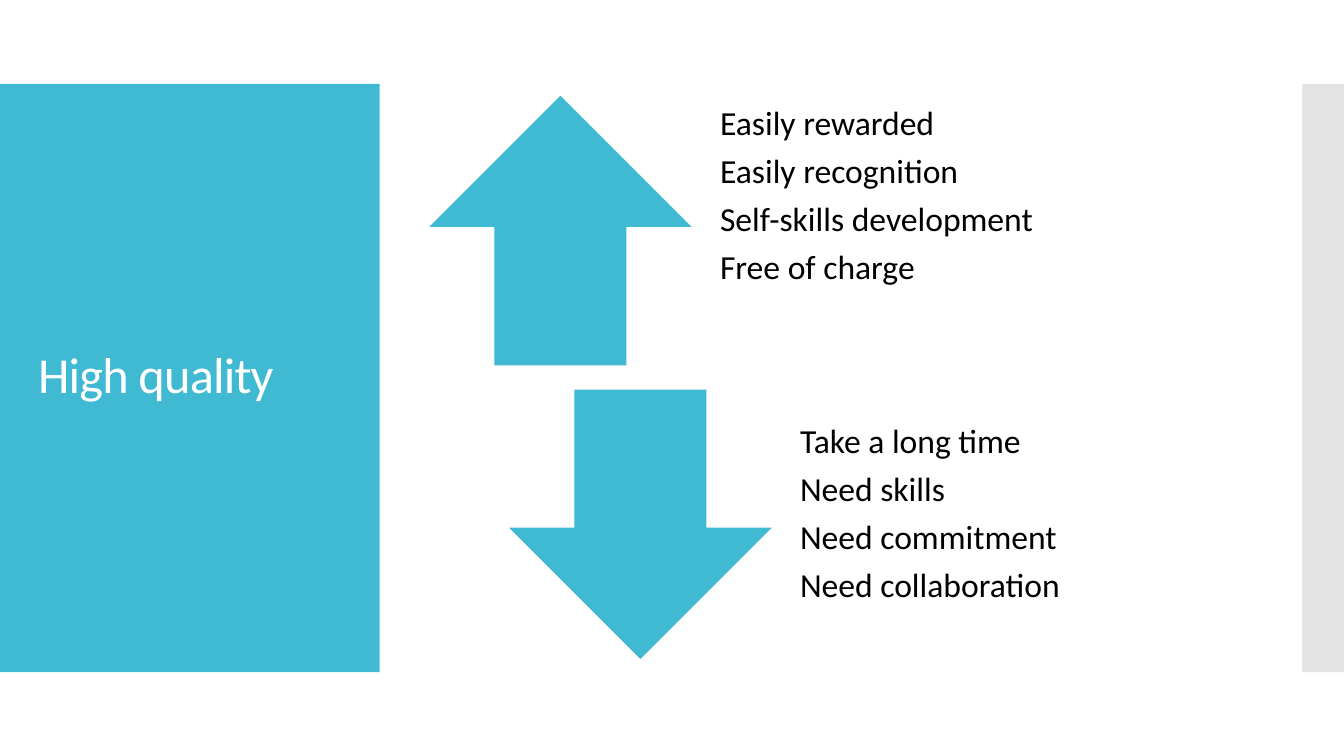
from dataclasses import dataclass

from lxml.etree import SubElement
from pptx import Presentation
from pptx.dml.color import RGBColor
from pptx.enum.shapes import MSO_SHAPE
from pptx.enum.text import MSO_ANCHOR
from pptx.oxml.ns import qn
from pptx.shapes.autoshape import Shape
from pptx.slide import Slide
from pptx.util import Emu, Inches, Pt

COLORS = {"teal": "40BAD2", "grey": "C8C8C8", "white": "FFFFFF", "black": "000000"}
FONT = "Calibri"

# The slide is a grid of 100 columns by 100 rows
WIDTH, HEIGHT = Inches(13.333), Inches(7.5)
COLUMN, ROW = WIDTH / 100, HEIGHT / 100

ARROW_WIDTH, ITEM_HEIGHT = 19.8, 35.87
FIRST_LEFT, FIRST_TOP = 31.8, 12.53
STEP_RIGHT, STEP_DOWN = 5.95, 38.93
TEXT_OFFSET, TEXT_WIDTH = 20.35, 33.6


@dataclass(frozen=True)
class Area:
    left: float
    top: float
    width: float
    height: float

    def lengths(self) -> tuple[Emu, Emu, Emu, Emu]:
        return (Emu(round(self.left * COLUMN)), Emu(round(self.top * ROW)),
                Emu(round(self.width * COLUMN)), Emu(round(self.height * ROW)))


@dataclass(frozen=True)
class Side:
    arrow: MSO_SHAPE
    points: tuple[str, ...]
    bottom_inset: float


SIDES = (
    Side(MSO_SHAPE.UP_ARROW,
         ("Easily rewarded", "Easily recognition",
          "Self-skills development", "Free of charge"), 0.67),
    Side(MSO_SHAPE.DOWN_ARROW,
         ("Take a long time", "Need skills",
          "Need commitment", "Need collaboration"), 0.19),
)


def add_block(page: Slide, kind: MSO_SHAPE, area: Area, color: str,
              outline: str | None = None, opacity: int = 100) -> Shape:
    block = page.shapes.add_shape(kind, *area.lengths())
    block.shadow.inherit = False
    block.fill.solid()
    block.fill.fore_color.rgb = RGBColor.from_string(COLORS[color])
    if outline:
        block.line.color.rgb = RGBColor.from_string(COLORS[outline])
        block.line.width = Pt(0.85)
    else:
        block.line.fill.background()
    if opacity < 100:
        tint = block.fill._xPr.find(".//" + qn("a:srgbClr"))
        SubElement(tint, qn("a:alpha")).set("val", str(opacity * 1000))
    return block


def add_text(page: Slide, area: Area, lines: tuple[str, ...], *, size: float,
             color: str, space_after: float = 0, tracking: float = 0,
             insets: tuple[float, float, float, float] = (0.1, 0.05, 0.1, 0.05)) -> Shape:
    """Insets are left, top, right and bottom, in inches."""
    box = page.shapes.add_textbox(*area.lengths())
    frame = box.text_frame
    frame.word_wrap = True
    frame.vertical_anchor = MSO_ANCHOR.MIDDLE
    (frame.margin_left, frame.margin_top,
     frame.margin_right, frame.margin_bottom) = map(Inches, insets)
    for index, line in enumerate(lines):
        para = frame.add_paragraph() if index else frame.paragraphs[0]
        para.line_spacing = 0.9
        para.space_after = Pt(space_after)
        span = para.add_run()
        span.text = line
        span.font.name = FONT
        span.font.size = Pt(size)
        span.font.color.rgb = RGBColor.from_string(COLORS[color])
        if tracking:
            span.font._element.set("spc", str(round(tracking * 100)))
    return box


def add_side(page: Slide, index: int, side: Side) -> None:
    left = FIRST_LEFT + index * STEP_RIGHT
    top = FIRST_TOP + index * STEP_DOWN
    add_block(page, side.arrow, Area(left, top, ARROW_WIDTH, ITEM_HEIGHT),
              "teal", outline="white")
    add_text(page, Area(left + TEXT_OFFSET, top, TEXT_WIDTH, ITEM_HEIGHT), side.points,
             size=24, color="black", space_after=8.4,
             insets=(0.19, 0, 0.19, side.bottom_inset))


def main() -> None:
    deck = Presentation()
    deck.slide_width, deck.slide_height = WIDTH, HEIGHT
    page = deck.slides.add_slide(deck.slide_layouts[6])

    # Side panels and title
    add_block(page, MSO_SHAPE.RECTANGLE, Area(0, 11.1, 28.25, 77.8), "teal")
    add_block(page, MSO_SHAPE.RECTANGLE, Area(96.9, 11.1, 3.1, 77.8), "grey", opacity=50)
    add_text(page, Area(2.1, 16.4, 24.15, 67.07), ("High quality",),
             size=36, color="white", tracking=-0.6)

    # Advantages and drawbacks
    for index, side in enumerate(SIDES):
        add_side(page, index, side)

    deck.save("out.pptx")


if __name__ == "__main__":
    main()
